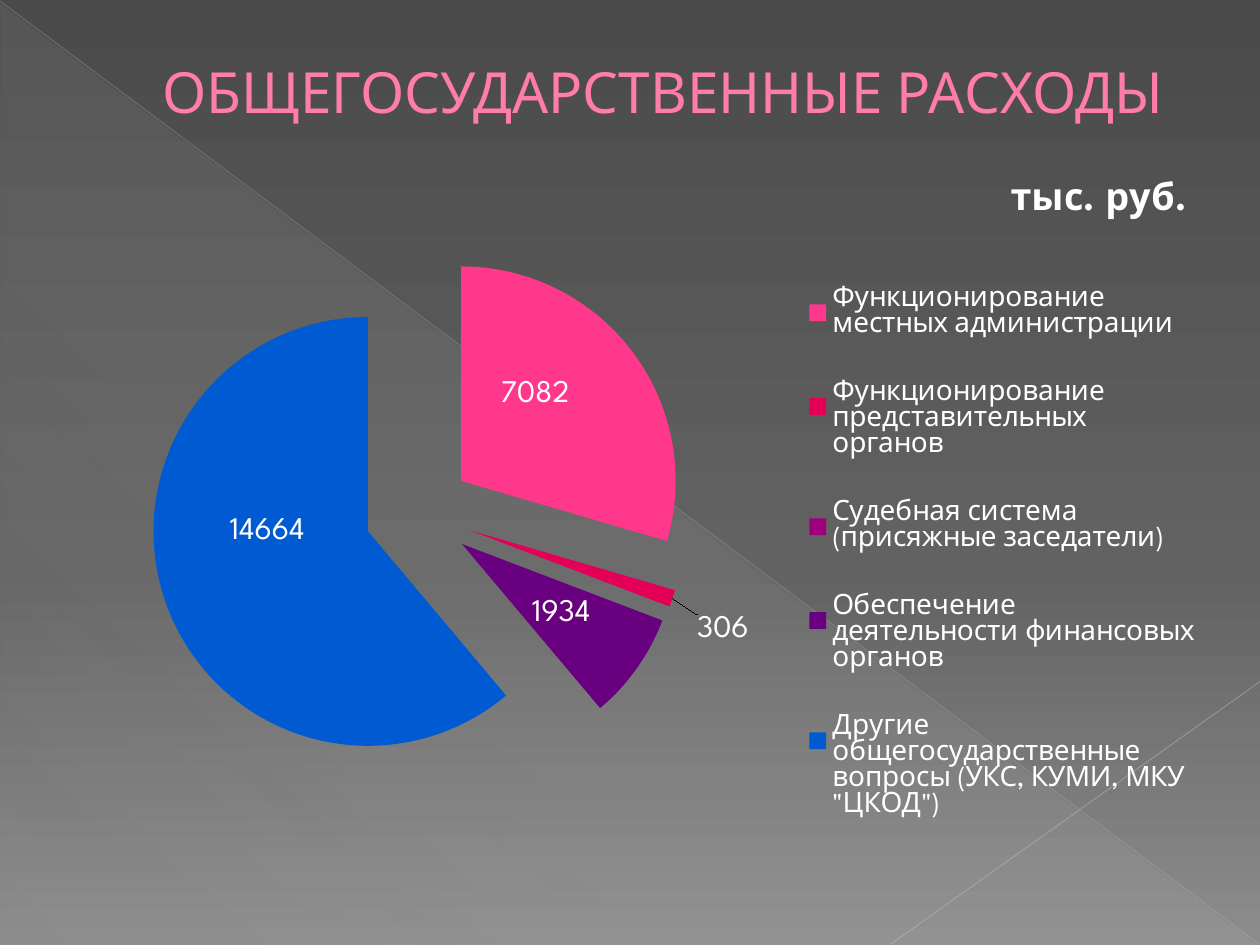
from dataclasses import dataclass

from pptx import Presentation
from pptx.chart.data import CategoryChartData
from pptx.dml.color import RGBColor
from pptx.enum.chart import XL_CHART_TYPE, XL_LABEL_POSITION, XL_LEGEND_POSITION
from pptx.enum.shapes import MSO_CONNECTOR, MSO_SHAPE
from pptx.enum.text import MSO_ANCHOR, PP_ALIGN
from pptx.oxml.xmlchemy import OxmlElement
from pptx.util import Pt

PIE = XL_CHART_TYPE.PIE
LABEL_CENTER = XL_LABEL_POSITION.CENTER
LEGEND_RIGHT = XL_LEGEND_POSITION.RIGHT
STRAIGHT = MSO_CONNECTOR.STRAIGHT
RIGHT_TRIANGLE = MSO_SHAPE.RIGHT_TRIANGLE
MIDDLE = MSO_ANCHOR.MIDDLE
CENTER = PP_ALIGN.CENTER


@dataclass(frozen=True)
class Theme:
    font: str = "League Spartan"
    heading: str = "FF7DA7"
    text: str = "FFFFFF"
    heading_size: float = 32.4
    unit_size: float = 21.6
    label_size: float = 18
    legend_size: float = 16
    # position %, colour, opacity %
    backdrop: tuple = ((0, "4A4A4A", 100), (60, "626262", 100), (100, "8C8C8C", 100))
    sheen: tuple = ((0, "D2D2D2", 10), (70, "D2D2D2", 8), (100, "D2D2D2", 1))
    long_ray: str = "BFBFBF"
    short_ray: str = "C6C6C6"


# category, value, slice colour, label shift from the slice centre
EXPENSES = [
    ("Функционирование местных администрации", 7082, "FF388C", (-0.01, -0.03)),
    ("Функционирование представительных органов", 306, "E40059", (0.13, 0.09)),
    ("Судебная система (присяжные заседатели)", 0, "9C007F", None),
    ("Обеспечение деятельности финансовых органов", 1934, "68007F", (0.01, 0.01)),
    ('Другие общегосударственные вопросы (УКС, КУМИ, МКУ "ЦКОД")', 14664, "005BD3", (0, -0.05)),
]


def element(tag, **attributes):
    node = OxmlElement(tag)
    for name, value in attributes.items():
        node.set(name, str(value))
    return node


def add_alpha(color, opacity):
    color.append(element("a:alpha", val=opacity * 1000))


def set_gradient(fill, owner, stops, angle):
    """Fill with any number of stops; the angle runs counter-clockwise."""
    fill.gradient()
    fill.gradient_angle = angle
    stop_list = owner.xpath(".//a:gsLst")[0]
    for stop in list(stop_list):
        stop_list.remove(stop)
    for position, rgb, opacity in stops:
        stop = element("a:gs", pos=position * 1000)
        color = element("a:srgbClr", val=rgb)
        if opacity < 100:
            add_alpha(color, opacity)
        stop.append(color)
        stop_list.append(stop)


def set_layout(part, index, **values):
    """Place a chart part by hand, in fractions of the chart area."""
    for old in part.xpath("c:layout"):
        part.remove(old)
    layout, manual = element("c:layout"), element("c:manualLayout")
    for name, value in values.items():
        manual.append(element(f"c:{name}", val=value))
    layout.append(manual)
    part.insert(index, layout)


class SlideBuilder:
    def __init__(self, slide, theme):
        self.slide = slide
        self.theme = theme

    def style(self, font, size, color=None, bold=False):
        values = {"name": self.theme.font, "size": Pt(size), "bold": bold}
        for name, value in values.items():
            setattr(font, name, value)
        font.color.rgb = RGBColor.from_string(color or self.theme.text)

    def background(self):
        set_gradient(self.slide.background.fill, self.slide.element, self.theme.backdrop, 270)

    def sheen(self, *box):
        triangle = self.slide.shapes.add_shape(RIGHT_TRIANGLE, *map(Pt, box))
        triangle.shadow.inherit = False
        triangle.line.fill.background()
        set_gradient(triangle.fill, triangle.element, self.theme.sheen, 227)

    def ray(self, ends, color, width, opacity):
        ray = self.slide.shapes.add_connector(STRAIGHT, *map(Pt, ends))
        ray.line.width = Pt(width)
        ray.line.color.rgb = RGBColor.from_string(color)
        add_alpha(ray.element.xpath(".//a:ln//a:srgbClr")[0], opacity)
        ray.element.spPr.append(element("a:effectLst"))

    def heading(self, text, *box):
        frame = self.slide.shapes.add_textbox(*map(Pt, box)).text_frame
        values = {"word_wrap": True, "vertical_anchor": MIDDLE, "margin_left": Pt(45)}
        for name, value in values.items():
            setattr(frame, name, value)
        paragraph = frame.paragraphs[0]
        paragraph.alignment = CENTER
        run = paragraph.add_run()
        run.text = text
        self.style(run.font, self.theme.heading_size, self.theme.heading)

    def pie(self, unit, expenses, *box):
        data = CategoryChartData()
        data.categories = [category for category, *_ in expenses]
        data.add_series("Series 1", [value for _, value, *_ in expenses])
        chart = self.slide.shapes.add_chart(PIE, *map(Pt, box), data).chart
        self.style(chart.font, self.theme.label_size)
        self.chart_title(chart, unit)
        self.legend(chart)
        plot_area = chart.element.xpath("c:chart/c:plotArea")[0]
        set_layout(plot_area, 0, layoutTarget="inner", xMode="edge", yMode="edge",
                   x=0, y=0.11, w=0.64, h=0.74)
        chart.plots[0].vary_by_categories = True
        self.slices(chart, expenses)

    def chart_title(self, chart, unit):
        chart.has_title = True
        frame = chart.chart_title.text_frame
        frame.text = unit
        self.style(frame.paragraphs[0].runs[0].font, self.theme.unit_size, bold=True)
        title = chart.element.xpath("c:chart/c:title")[0]
        set_layout(title, 1, xMode="edge", yMode="edge", x=0.82, y=0.01)

    def legend(self, chart):
        chart.has_legend = True
        chart.legend.position = LEGEND_RIGHT
        chart.legend.include_in_layout = False
        self.style(chart.legend.font, self.theme.legend_size)
        legend = chart.element.xpath("c:chart/c:legend")[0]
        set_layout(legend, 1, xMode="edge", yMode="edge", x=0.66, y=0.11, w=0.33, h=0.85)

    def slices(self, chart, expenses):
        series = chart.plots[0].series[0]
        values = {"show_value": True, "position": LABEL_CENTER,
                  "number_format": "#", "number_format_is_linked": False}
        for name, value in values.items():
            setattr(series.data_labels, name, value)
        self.style(series.data_labels.font, self.theme.label_size)
        for index, (_, _, color, shift) in enumerate(expenses):
            point = series.points[index]
            point.format.fill.solid()
            point.format.fill.fore_color.rgb = RGBColor.from_string(color)
            if shift:
                label = point.data_label
                label.position = LABEL_CENTER
                self.style(label.font, self.theme.label_size)
                node = chart.element.xpath(f".//c:dLbl[c:idx/@val='{index}']")[0]
                set_layout(node, 1, x=shift[0], y=shift[1])
        # the whole series and each slice stand apart by the same share
        for follower in chart.element.xpath(".//c:ser/c:dPt[1] | .//c:dPt/c:spPr"):
            follower.addprevious(element("c:explosion", val=25))


def main():
    deck = Presentation()
    deck.slide_width, deck.slide_height = Pt(720), Pt(540)
    theme = Theme()
    builder = SlideBuilder(deck.slides.add_slide(deck.slide_layouts[6]), theme)
    builder.background()
    builder.sheen(0.5, 1.3, 718.7, 538.7)
    builder.ray((0, 0.5, 719.5, 539.5), theme.long_ray, 0.39, 35)
    builder.ray((720, 389.5, 509, 539.5), theme.short_ray, 0.47, 45)
    builder.heading("ОБЩЕГОСУДАРСТВЕННЫЕ РАСХОДЫ", 36, 21, 648, 62)
    builder.pie("тыс. руб.", EXPENSES, 25, 94.5, 669, 414)
    deck.save("out.pptx")


if __name__ == "__main__":
    main()
